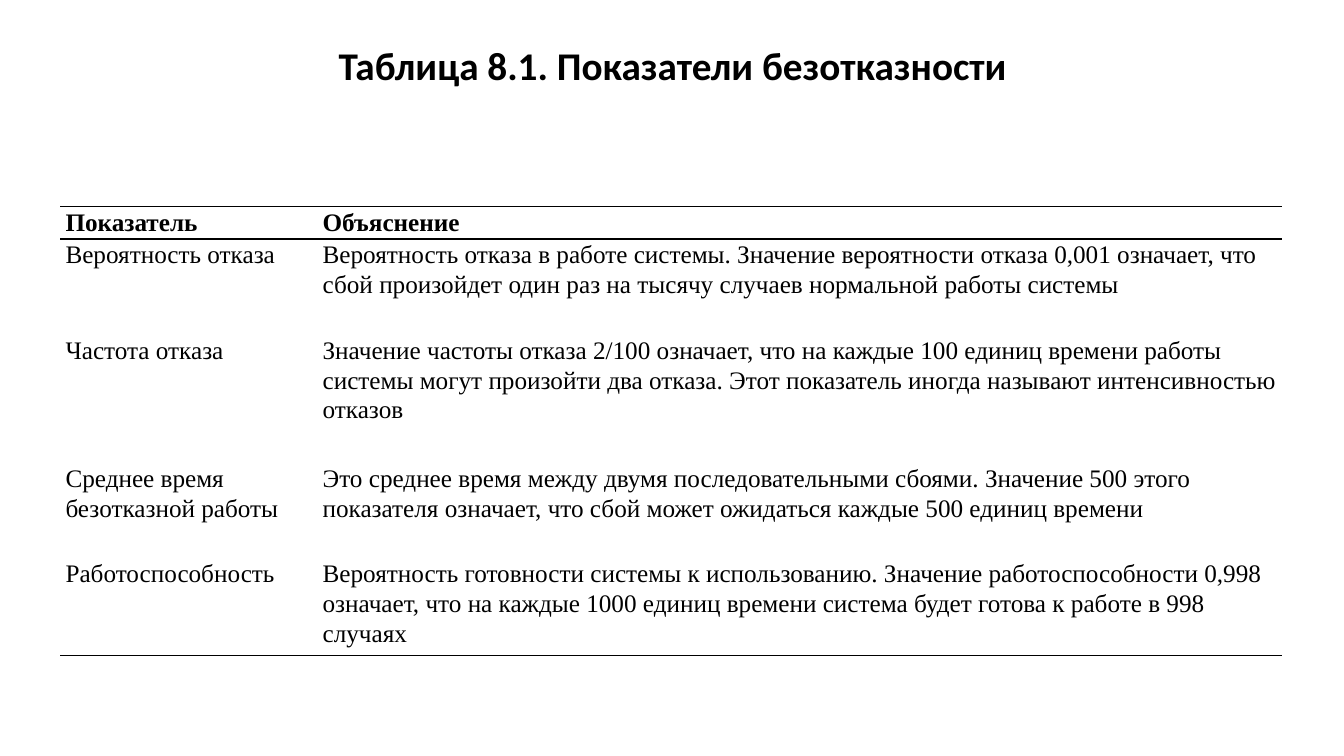
from typing import Any, NamedTuple

from lxml import etree
from pptx import Presentation
from pptx import util as u
from pptx.dml.color import RGBColor
from pptx.enum import text
from pptx.oxml.ns import qn

SLIDE_W, SLIDE_H = 13.33, 7.5
BLACK, WHITE = "000000", "FFFFFF"
COLS = (2.55, 9.57)


class Row(NamedTuple):
    measure: str
    meaning: str
    height: float
    bold: bool = False
    borders: tuple[str, ...] = ()


ROWS = [
    Row("Показатель", "Объяснение", 0.32, True, ("T", "B")),
    Row("Вероятность отказа",
        "Вероятность отказа в работе системы. Значение вероятности отказа 0,001 означает, "
        "что сбой произойдет один раз на тысячу случаев нормальной работы системы",
        0.95, borders=("T",)),
    Row("Частота отказа",
        "Значение частоты отказа 2/100 означает, что на каждые 100 единиц времени работы "
        "системы могут произойти два отказа. Этот показатель иногда называют "
        "интенсивностью отказов", 1.27),
    Row("Среднее время безотказной работы",
        "Это среднее время между двумя последовательными сбоями. Значение 500 этого "
        "показателя означает, что сбой может ожидаться каждые 500 единиц времени", 0.95),
    Row("Работоспособность",
        "Вероятность готовности системы к использованию. Значение работоспособности 0,998 "
        "означает, что на каждые 1000 единиц времени система будет готова к работе в 998 "
        "случаях", 0.95, borders=("B",)),
]


def rgb(value: str) -> RGBColor:
    return RGBColor.from_string(value)


def apply(target: Any, values: dict[str, Any]) -> None:
    for name, value in values.items():
        setattr(target, name, value)


def write(tf: Any, content: str, para: dict[str, Any], font: dict[str, Any]) -> None:
    p = tf.paragraphs[0]
    apply(p, para)
    r = p.add_run()
    r.text = content
    apply(r.font, font)
    r.font.color.rgb = rgb(BLACK)


def set_borders(cell: Any, sides: tuple[str, ...]) -> None:
    pr = cell._tc.get_or_add_tcPr()
    for i, side in enumerate("LRTB"):
        ln = etree.Element(qn(f"a:ln{side}"), w=str(u.Pt(1)))
        if side in sides:
            fill = etree.SubElement(ln, qn("a:solidFill"))
            etree.SubElement(fill, qn("a:srgbClr"), val=BLACK)
        else:
            etree.SubElement(ln, qn("a:noFill"))
        pr.insert(i, ln)


def add_title(s: Any, content: str) -> None:
    sp = s.shapes.add_textbox(u.Inches(0.92), u.Inches(0.41), u.Inches(11.5), u.Inches(0.59))
    apply(sp.text_frame, {"word_wrap": True, "vertical_anchor": text.MSO_ANCHOR.TOP})
    write(sp.text_frame, content,
          {"alignment": text.PP_ALIGN.CENTER, "line_spacing": 0.9, "space_before": u.Pt(10)},
          {"name": "Calibri", "size": u.Pt(28), "bold": True})


def add_measures(s: Any, rows: list[Row]) -> None:
    height = sum(row.height for row in rows)
    frame = s.shapes.add_table(len(rows), len(COLS), u.Inches(0.6), u.Inches(2.05),
                               u.Inches(sum(COLS)), u.Inches(height))
    table = frame.table
    apply(table, {"first_row": False, "horz_banding": False})
    for column, width in zip(table.columns, COLS):
        column.width = u.Inches(width)
    for i, row in enumerate(rows):
        table.rows[i].height = u.Inches(row.height)
        for j, content in enumerate((row.measure, row.meaning)):
            cell = table.cell(i, j)
            apply(cell, {"margin_left": u.Inches(0.05), "margin_right": u.Inches(0.05),
                         "margin_top": 0, "margin_bottom": 0,
                         "vertical_anchor": text.MSO_ANCHOR.TOP})
            cell.fill.solid()
            cell.fill.fore_color.rgb = rgb(WHITE)
            set_borders(cell, row.borders)
            write(cell.text_frame, content, {"line_spacing": 1.07},
                  {"name": "Times New Roman", "size": u.Pt(18), "bold": row.bold})


def main() -> None:
    prs = Presentation()
    apply(prs, {"slide_width": u.Inches(SLIDE_W), "slide_height": u.Inches(SLIDE_H)})
    s = prs.slides.add_slide(prs.slide_layouts[6])
    add_title(s, "Таблица 8.1. Показатели безотказности")
    add_measures(s, ROWS)
    prs.save("out.pptx")


if __name__ == "__main__":
    main()
